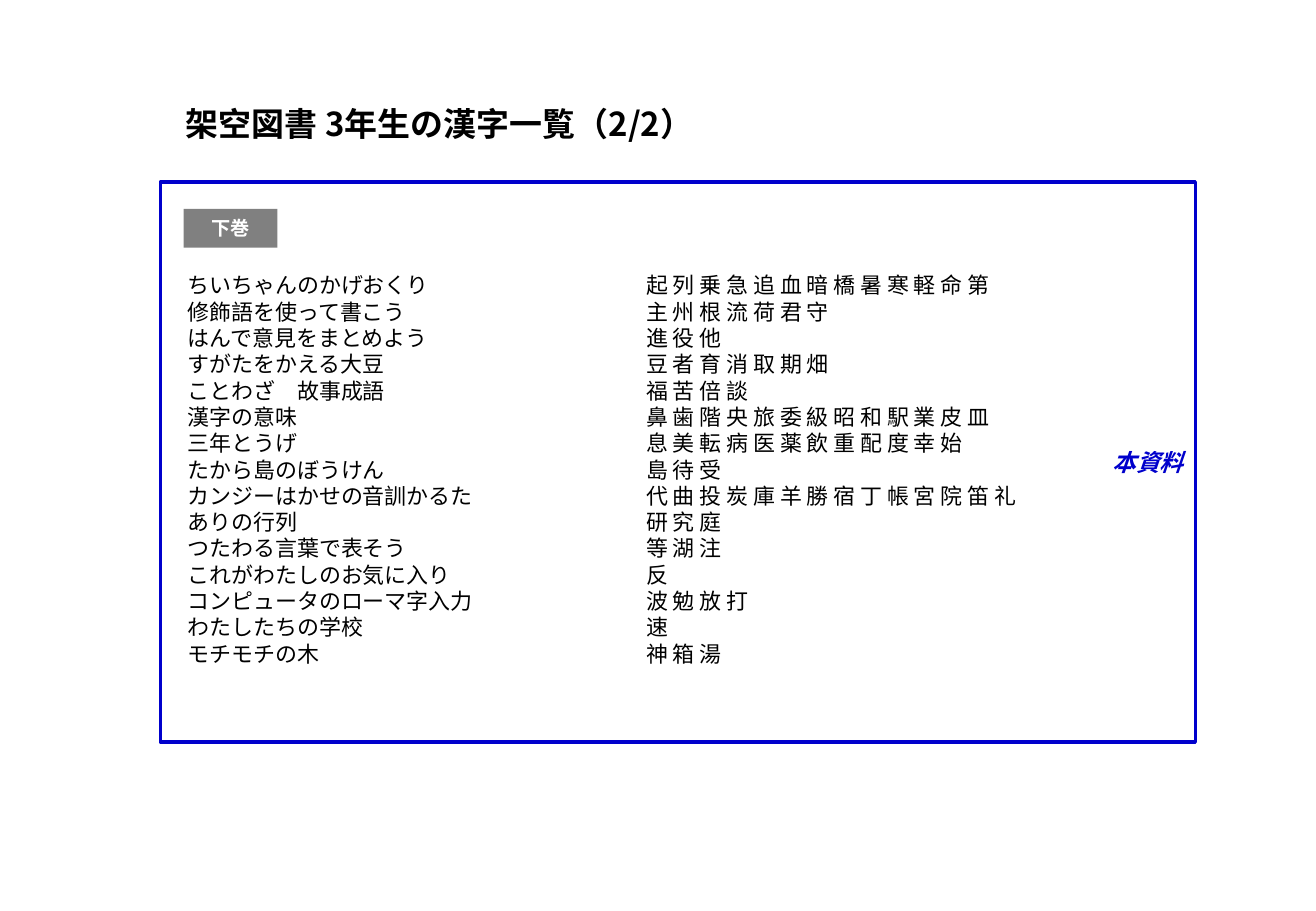
from pptx import Presentation
from pptx.dml.color import RGBColor
from pptx.enum.shapes import MSO_SHAPE
from pptx.enum.text import MSO_ANCHOR, MSO_AUTO_SIZE, PP_ALIGN
from pptx.oxml.ns import qn
from pptx.util import Cm, Pt
from lxml.etree import SubElement

FONT = "Noto Sans CJK JP"
LESSONS = [
    ("ちいちゃんのかげおくり", "起列乗急追血暗橋暑寒軽命第"),
    ("修飾語を使って書こう", "主州根流荷君守"),
    ("はんで意見をまとめよう", "進役他"),
    ("すがたをかえる大豆", "豆者育消取期畑"),
    ("ことわざ　故事成語", "福苦倍談"),
    ("漢字の意味", "鼻歯階央旅委級昭和駅業皮皿"),
    ("三年とうげ", "息美転病医薬飲重配度幸始"),
    ("たから島のぼうけん", "島待受"),
    ("カンジーはかせの音訓かるた", "代曲投炭庫羊勝宿丁帳宮院笛礼"),
    ("ありの行列", "研究庭"),
    ("つたわる言葉で表そう", "等湖注"),
    ("これがわたしのお気に入り", "反"),
    ("コンピュータのローマ字入力", "波勉放打"),
    ("わたしたちの学校", "速"),
    ("モチモチの木", "神箱湯"),
]


def color(hex_code):
    return RGBColor.from_string(hex_code)


def format_text(shape, size, hex_code, align, anchor, bold=False, italic=False):
    """Format every run of the shape, for Latin and Japanese characters alike."""
    frame = shape.text_frame
    frame.word_wrap = True
    frame.auto_size = MSO_AUTO_SIZE.NONE
    frame.vertical_anchor = anchor
    frame.margin_left = frame.margin_right = Cm(0.25)
    frame.margin_top = frame.margin_bottom = Cm(0.13)
    for paragraph in frame.paragraphs:
        paragraph.alignment = align
        for run in paragraph.runs:
            run.font.name = FONT
            run.font.size = Pt(size)
            run.font.bold = bold
            run.font.italic = italic
            run.font.color.rgb = color(hex_code)
            SubElement(run.font._element, qn("a:ea")).set("typeface", FONT)


prs = Presentation()
prs.slide_width, prs.slide_height = Cm(27.51), Cm(19.05)
slide = prs.slides.add_slide(prs.slide_layouts[5])

# Lesson names, with their kanji lined up at a tab stop
lessons = slide.shapes.add_textbox(Cm(3.68), Cm(5.56), Cm(19.74), Cm(8.59))
lessons.text_frame.text = "\n".join(
    f"{lesson}\t{' '.join(kanji)}" for lesson, kanji in LESSONS
)
format_text(lessons, 13, "000000", PP_ALIGN.LEFT, MSO_ANCHOR.TOP)
for paragraph in lessons.text_frame.paragraphs:
    paragraph.line_spacing = Pt(15.6)
    tab_stops = SubElement(paragraph._p.get_or_add_pPr(), qn("a:tabLst"))
    kanji_stop = SubElement(tab_stops, qn("a:tab"))
    kanji_stop.set("pos", str(Cm(9.58)))
    kanji_stop.set("algn", "l")

# Volume label
volume = slide.shapes.add_shape(MSO_SHAPE.RECTANGLE, Cm(3.84), Cm(4.37), Cm(1.96), Cm(0.81))
volume.shadow.inherit = False
volume.fill.solid()
volume.fill.fore_color.rgb = color("808080")
volume.line.fill.background()
volume.text_frame.text = "下巻"
format_text(volume, 11.4, "FFFFFF", PP_ALIGN.CENTER, MSO_ANCHOR.MIDDLE, bold=True)

# Title
title = slide.shapes.title
title.left, title.top, title.width, title.height = Cm(3.63), Cm(2.03), Cm(19.99), Cm(1.09)
title.text_frame.text = "架空図書 3年生の漢字一覧（2/2）"
format_text(title, 19.5, "000000", PP_ALIGN.LEFT, MSO_ANCHOR.MIDDLE, bold=True)

# Frame around the part covered by this material
coverage = slide.shapes.add_shape(MSO_SHAPE.RECTANGLE, Cm(3.35), Cm(3.81), Cm(21.64), Cm(11.71))
coverage.shadow.inherit = False
coverage.fill.background()
coverage.line.color.rgb = color("0000CC")
coverage.line.width = Pt(2)
coverage.text_frame.text = "本資料"
format_text(coverage, 14, "0000CC", PP_ALIGN.RIGHT, MSO_ANCHOR.MIDDLE, bold=True, italic=True)

prs.save("out.pptx")
